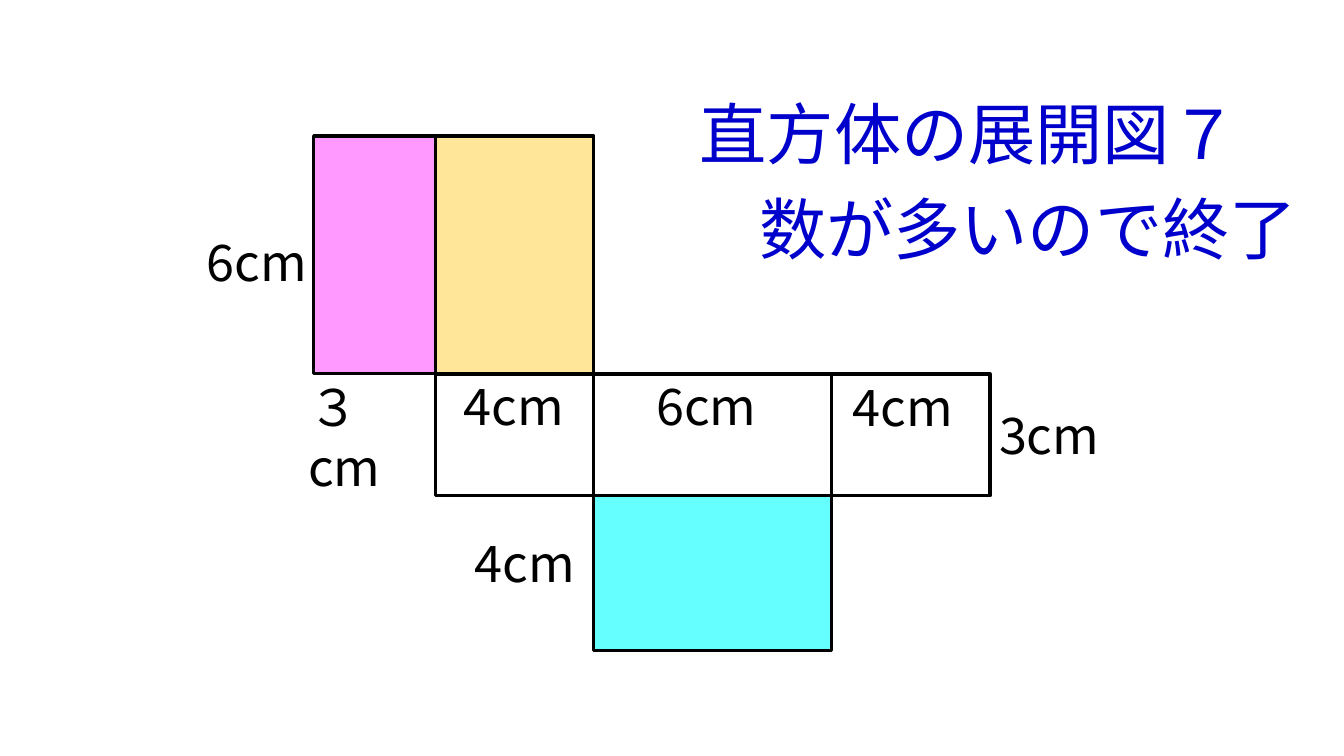
from pptx import Presentation
from pptx import util as u
from pptx.dml.color import RGBColor
from pptx.enum import shapes, text
from pptx.oxml import ns

FONT = "Noto Sans CJK JP"


def color(hex_string):
    return RGBColor.from_string(hex_string)


def write(sp, words, size, hex_string):
    tf = sp.text_frame
    tf.word_wrap = False
    tf.auto_size = text.MSO_AUTO_SIZE.SHAPE_TO_FIT_TEXT
    tf.vertical_anchor = text.MSO_ANCHOR.TOP
    p = tf.paragraphs[0]
    p.alignment = text.PP_ALIGN.LEFT
    r = p.add_run()
    r.text = words
    r.font.size = u.Pt(size)
    r.font.name = FONT
    r.font.color.rgb = color(hex_string)
    ea = r.font._element.makeelement(ns.qn("a:ea"), {"typeface": FONT})
    r.font._element.find(ns.qn("a:latin")).addnext(ea)


prs = Presentation()
prs.slide_width, prs.slide_height = u.Inches(13.33), u.Inches(7.5)
s = prs.slides.add_slide(prs.slide_layouts[5])

# Title and second line
title = s.shapes.title
title.left, title.top = u.Inches(6.84), u.Inches(0.87)
title.width, title.height = u.Inches(5.59), u.Inches(0.91)
write(title, "直方体の展開図７", 48, "0000CC")
subtitle = s.shapes.add_textbox(*map(u.Inches, (7.43, 1.81, 5.59, 0.91)))
write(subtitle, "数が多いので終了", 48, "0000CC")

# Faces of the net, placed on a grid: column, row, fill
col_edges = [3.11, 4.32, 5.89, 8.25, 9.82]
row_edges = [1.35, 3.71, 4.92, 6.45]
faces = [
    (0, 0, "FF99FF"),
    (1, 1, None),
    (2, 1, None),
    (3, 1, None),
    (1, 0, "FFE699"),
    (2, 2, "66FFFF"),
]
for col, row, fill in faces:
    x, y = col_edges[col], row_edges[row]
    w, h = col_edges[col + 1] - x, row_edges[row + 1] - y
    sp = s.shapes.add_shape(shapes.MSO_SHAPE.RECTANGLE, *map(u.Inches, (x, y, w, h)))
    sp.shadow.inherit = False
    sp.line.color.rgb = color("000000")
    sp.line.width = u.Pt(2.25)
    if fill:
        sp.fill.solid()
        sp.fill.fore_color.rgb = color(fill)
    else:
        sp.fill.background()

# Edge lengths: left, top, words
labels = [
    (4.5, 3.67, "4cm"),
    (6.41, 3.67, "6cm"),
    (8.36, 3.68, "4cm"),
    (9.81, 3.96, "3cm"),
    (1.95, 2.24, "6cm"),
    (4.61, 5.23, "4cm"),
]
for x, y, words in labels:
    write(s.shapes.add_textbox(*map(u.Inches, (x, y, 1.28, 0.71))), words, 36, "000000")

# Narrow label that breaks after its wide digit
narrow = s.shapes.add_textbox(*map(u.Inches, (2.96, 3.68, 1.1, 1.31)))
write(narrow, "３cm", 36, "000000")
narrow.text_frame.word_wrap = True

prs.save("out.pptx")
